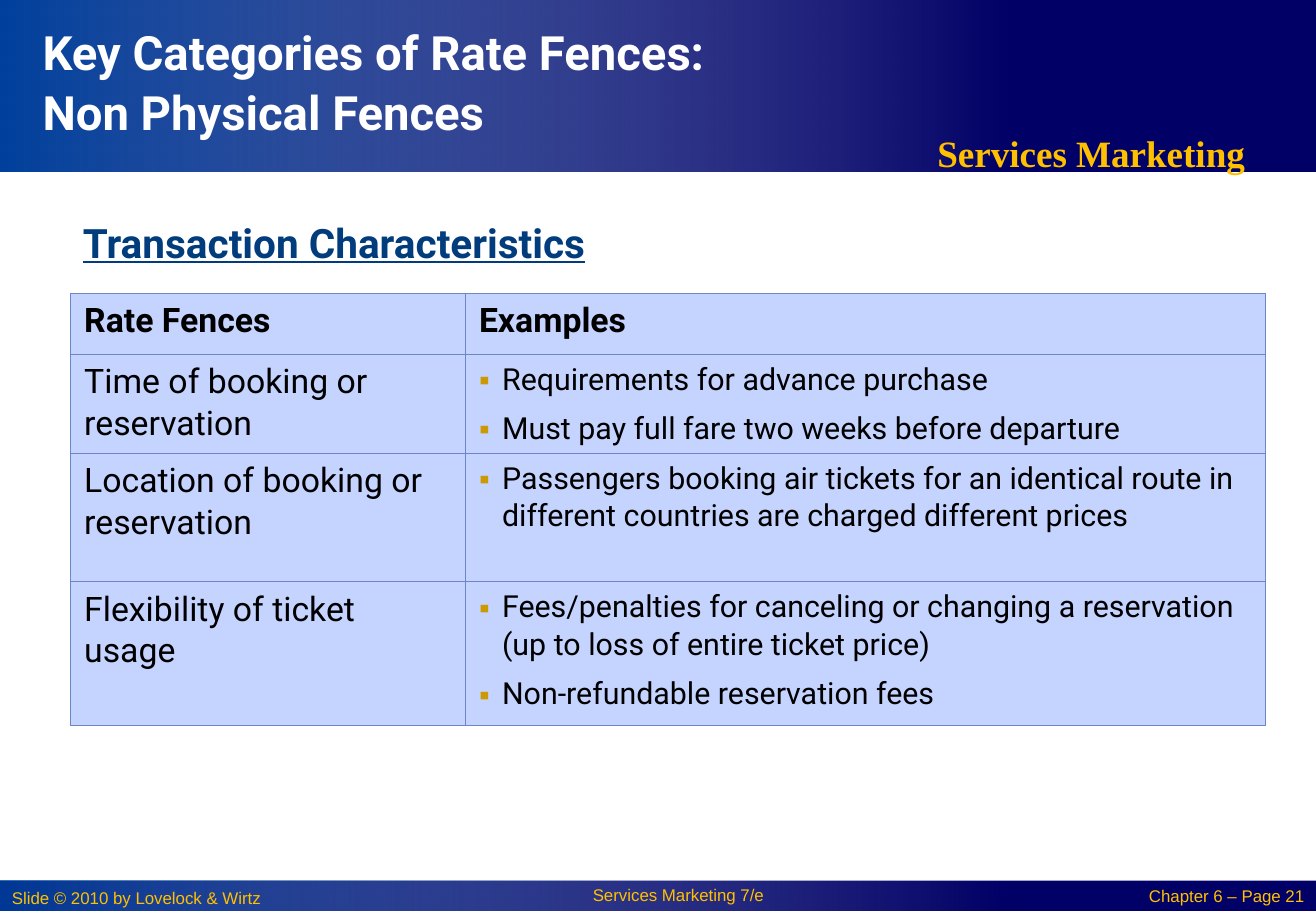
from lxml.etree import SubElement as Sub
from pptx import Presentation
from pptx.dml.color import RGBColor as RGB
from pptx.enum.shapes import MSO_SHAPE as Shape
from pptx.enum.text import MSO_ANCHOR as Anchor, MSO_AUTO_SIZE as Auto, PP_ALIGN as Align
from pptx.oxml.ns import qn
from pptx.util import Inches, Pt

NAVY = RGB(0x00, 0x00, 0x66)
BLUE = RGB(0x01, 0x52, 0xAB)
DEEP = RGB(0x01, 0x3C, 0x7D)
WHITE = RGB(0xFF, 0xFF, 0xFF)
BLACK = RGB(0x00, 0x00, 0x00)
GOLD = RGB(0xFF, 0xC0, 0x00)
OCHRE = RGB(0xCC, 0x99, 0x00)
PALE = RGB(0xC5, 0xD3, 0xFF)
EDGE = RGB(0x6E, 0x86, 0xC6)

COLS, ROWS = 130, 90
UNIT = Inches(1) / 12

TITLE = "Key Categories of Rate Fences:\vNon Physical Fences"
BARS = [(87, 3, 69), (0, 17, 80)]
FOOT = dict(size=10, font="Arial", color=GOLD)
LABELS = [
    ("Services Marketing", (84, 10.5, 47.6, 7.5),
     dict(size=22, font="Times New Roman", color=GOLD, bold=True, align=Align.CENTER, line=1.4)),
    ("Slide © 2010 by Lovelock & Wirtz", (0, 87, 31, 3.3), FOOT),
    ("Services Marketing 7/e", (51, 87, 32, 3), dict(FOOT, align=Align.CENTER, line=0.9)),
    ("Chapter 6 – Page 21", (109, 87.1, 21, 3), dict(FOOT, align=Align.RIGHT, line=0.9)),
    ("Transaction Characteristics", (7, 19, 60, 7.7),
     dict(size=24, color=DEEP, bold=True, under=True, line=1.4)),
]
HEADS = ["Rate Fences", "Examples"]
FENCES = [
    ("Time of booking or reservation",
     ["Requirements for advance purchase", "Must pay full fare two weeks before departure"]),
    ("Location of booking or reservation",
     ["Passengers booking air tickets for an identical route in different countries "
      "are charged different prices"]),
    ("Flexibility of ticket usage",
     ["Fees/penalties for canceling or changing a reservation (up to loss of entire ticket price)",
      "Non-refundable reservation fees"]),
]
WIDTHS = [39, 79]
HEIGHTS = [6, 8.8, 12.7, 14.2]


def grid(*cells):
    return [round(cell * UNIT) for cell in cells]


def write(frame, lines, size=20, font="Roboto", color=BLACK, bold=False, under=False,
          align=Align.LEFT, line=1.05, gap=0, mark=None):
    frame.word_wrap = True
    for i, text in enumerate(lines):
        para = frame.paragraphs[0] if i == 0 else frame.add_paragraph()
        para.text = text
        para.alignment = align
        if mark:
            props = para._p.get_or_add_pPr()
            props.set("marL", str(Inches(0.19)))
            props.set("indent", str(-Inches(0.19)))
            Sub(Sub(props, qn("a:buClr")), qn("a:srgbClr"), val=str(OCHRE))
            Sub(props, qn("a:buFont"), typeface="Arial")
            Sub(props, qn("a:buChar"), char=mark)
        para.line_spacing = line
        if i:
            para.space_before = Pt(gap)
        for run in para.runs:
            face = run.font
            face.size, face.name, face.bold = Pt(size), font, bold
            face.underline = under
            face.color.rgb = color


def band(slide, top, high, wide):
    bar = slide.shapes.add_shape(Shape.RECTANGLE, *grid(0, top, wide, high))
    bar.shadow.inherit = False
    bar.line.fill.background()
    return bar.fill


def fade(fill, alpha):
    fill.gradient()
    fill.gradient_angle = 0
    stops = zip(fill.gradient_stops, (0, 1), (BLUE, WHITE), (alpha, 0))
    for stop, place, color, share in stops:
        stop.position = place
        stop.color.rgb = color
        tint = stop._gs.find(qn("a:srgbClr"))
        Sub(tint, qn("a:alpha"), val=str(share * 1000))


def dress(cell):
    cell.fill.solid()
    cell.fill.fore_color.rgb = PALE
    cell.margin_left = cell.margin_right = Inches(0.11)
    cell.margin_top = cell.margin_bottom = Inches(0.05)
    props = cell._tc.get_or_add_tcPr()
    for i, side in enumerate("LRTB"):
        edge = Sub(props, qn("a:ln" + side), w=str(Pt(0.75)))
        Sub(Sub(edge, qn("a:solidFill")), qn("a:srgbClr"), val=str(EDGE))
        props.insert(i, edge)


def main():
    deck = Presentation()
    deck.slide_width, deck.slide_height = grid(COLS, ROWS)
    slide = deck.slides.add_slide(deck.slide_layouts[5])

    for top, high, alpha in BARS:
        fill = band(slide, top, high, COLS)
        fill.solid()
        fill.fore_color.rgb = NAVY
        fade(band(slide, top, high, 100), alpha)

    for text, place, form in LABELS:
        label = slide.shapes.add_textbox(*grid(*place))
        write(label.text_frame, [text], **form)

    title = slide.shapes.title
    title.left, title.top, title.width, title.height = grid(3, 0, 107.2, 15.8)
    title.text_frame.auto_size = Auto.NONE
    title.text_frame.vertical_anchor = Anchor.MIDDLE
    write(title.text_frame, [TITLE], size=28, color=WHITE, bold=True)
    slide.shapes._spTree.append(title._element)

    place = grid(7, 29, sum(WIDTHS), sum(HEIGHTS))
    table = slide.shapes.add_table(len(HEIGHTS), len(WIDTHS), *place).table
    table.horz_banding = False
    for col, wide in zip(table.columns, grid(*WIDTHS)):
        col.width = wide
    for row, high in zip(table.rows, grid(*HEIGHTS)):
        row.height = high
    for cell in table.iter_cells():
        dress(cell)
    for i, head in enumerate(HEADS):
        write(table.cell(0, i).text_frame, [head], bold=True)
    for i, (fence, cases) in enumerate(FENCES, 1):
        write(table.cell(i, 0).text_frame, [fence])
        write(table.cell(i, 1).text_frame, cases, size=18, gap=7.2, mark="▪")

    deck.save("out.pptx")


if __name__ == "__main__":
    main()
